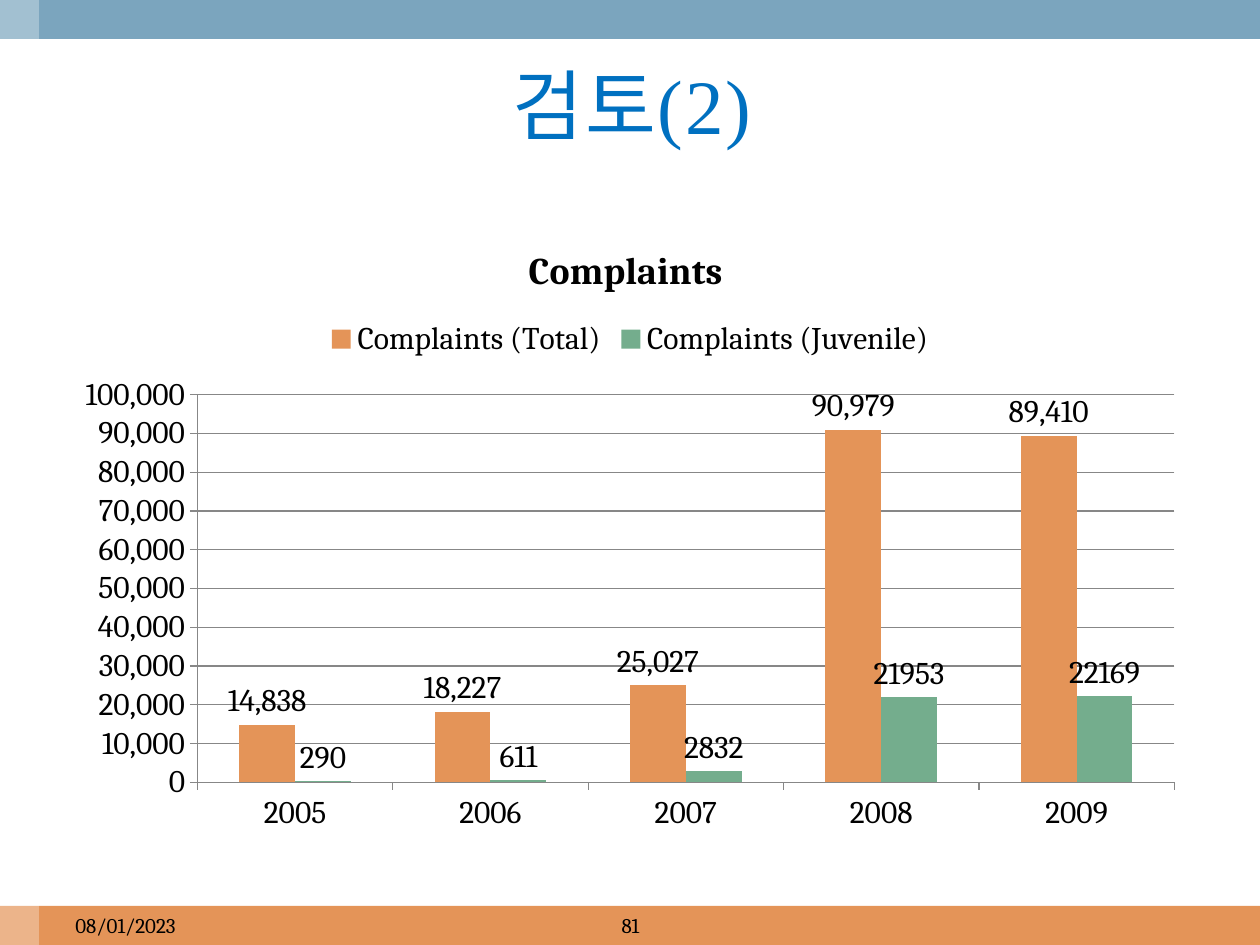
from dataclasses import dataclass

from lxml import etree
from pptx import Presentation
from pptx.chart.data import CategoryChartData
from pptx.dml.color import RGBColor
from pptx.enum.chart import XL_CHART_TYPE, XL_LABEL_POSITION, XL_LEGEND_POSITION, XL_TICK_MARK
from pptx.enum.shapes import MSO_SHAPE
from pptx.enum.text import MSO_ANCHOR, PP_ALIGN
from pptx.oxml.ns import qn
from pptx.util import Pt

EMU_PER_PX = 914400 / 126
COLUMNS = XL_CHART_TYPE.COLUMN_CLUSTERED
ABOVE_BAR = XL_LABEL_POSITION.OUTSIDE_END
TOP = XL_LEGEND_POSITION.TOP
TICK_OUT = XL_TICK_MARK.OUTSIDE
RECTANGLE = MSO_SHAPE.RECTANGLE
MIDDLE = MSO_ANCHOR.MIDDLE
LEFT, CENTER = PP_ALIGN.LEFT, PP_ALIGN.CENTER

COLORS = {
    "orange": "E49458",
    "blue": "7BA5BE",
    "green": "74AD8D",
    "title": "0070C0",
    "text": "000000",
    "axis": "878787",
    "white": "FFFFFF",
}


@dataclass(frozen=True)
class Box:
    left: int
    top: int
    width: int
    height: int

    def emu(self) -> list[int]:
        return [px(n) for n in (self.left, self.top, self.width, self.height)]


@dataclass(frozen=True)
class Band:
    box: Box
    color: str
    opacity: int = 100


@dataclass(frozen=True)
class Label:
    box: Box
    text: str
    size: int
    font: str
    color: str
    align: int
    spacing: int = 0


@dataclass(frozen=True)
class ComplaintSeries:
    name: str
    counts: tuple[int, ...]
    color: str
    number_format: str


BANDS = (
    Band(Box(0, 906, 1260, 39), "orange"),
    Band(Box(0, 0, 1260, 39), "blue"),
    Band(Box(0, 0, 39, 945), "white", 30),
)
LABELS = (
    Label(Box(42, 39, 1180, 130), "검토(2)", 44, "Times New Roman", "title", CENTER, 100),
    Label(Box(63, 906, 294, 39), "08/01/2023", 12, "Cambria", "text", LEFT),
    Label(Box(431, 906, 399, 39), "81", 12, "Cambria", "text", CENTER),
)
YEARS = ("2005", "2006", "2007", "2008", "2009")
COMPLAINTS = (
    ComplaintSeries("Complaints (Total)", (14838, 18227, 25027, 90979, 89410), "orange", "#,##0"),
    ComplaintSeries("Complaints (Juvenile)", (290, 611, 2832, 21953, 22169), "green", "General"),
)


def px(length: int) -> int:
    return round(length * EMU_PER_PX)


def rgb(name: str) -> RGBColor:
    return RGBColor.from_string(COLORS[name])


def draw_band(slide, band: Band) -> None:
    strip = slide.shapes.add_shape(RECTANGLE, *band.box.emu())
    strip.shadow.inherit = False
    strip.line.fill.background()
    strip.fill.solid()
    strip.fill.fore_color.rgb = rgb(band.color)
    if band.opacity < 100:
        color = strip.fill._xPr.find(qn("a:solidFill"))[0]
        etree.SubElement(color, qn("a:alpha")).set("val", str(band.opacity * 1000))


def draw_label(slide, label: Label) -> None:
    frame = slide.shapes.add_textbox(*label.box.emu()).text_frame
    frame.word_wrap = True
    frame.vertical_anchor = MIDDLE
    paragraph = frame.paragraphs[0]
    paragraph.alignment = label.align
    run = paragraph.add_run()
    run.text = label.text
    run.font.size = Pt(label.size)
    run.font.name = label.font
    run.font.color.rgb = rgb(label.color)
    if label.spacing:
        run.font._element.set("spc", str(label.spacing))


def draw_complaints(slide, box: Box) -> None:
    counts = CategoryChartData()
    counts.categories = YEARS
    for entry in COMPLAINTS:
        counts.add_series(entry.name, entry.counts, entry.number_format)
    chart = slide.shapes.add_chart(COLUMNS, *box.emu(), counts).chart
    chart.font.name = "Cambria"
    chart.font.size = Pt(18)
    chart.font.color.rgb = rgb("text")

    chart.has_title = True
    heading = chart.chart_title.text_frame.paragraphs[0].add_run()
    heading.text = "Complaints "
    heading.font.name = "Cambria"
    heading.font.size = Pt(21.6)
    heading.font.bold = True
    heading.font.color.rgb = rgb("text")
    chart.chart_title.include_in_layout = False

    chart.has_legend = True
    chart.legend.position = TOP
    chart.legend.include_in_layout = False

    count_axis = chart.value_axis
    count_axis.minimum_scale = 0
    count_axis.maximum_scale = 100000
    count_axis.major_unit = 10000
    count_axis.has_major_gridlines = True
    count_axis.tick_labels.number_format = "#,##0"
    count_axis.tick_labels.number_format_is_linked = False
    for axis in (chart.category_axis, count_axis):
        axis.major_tick_mark = TICK_OUT
        axis.format.line.color.rgb = rgb("axis")
        axis.format.line.width = Pt(0.75)
    gridline = count_axis.major_gridlines.format.line
    gridline.color.rgb = rgb("axis")
    gridline.width = Pt(0.75)

    plot = chart.plots[0]
    plot.gap_width = 150
    plot.overlap = 0
    plot.vary_by_categories = False
    for bars, entry in zip(plot.series, COMPLAINTS):
        bars.format.fill.solid()
        bars.format.fill.fore_color.rgb = rgb(entry.color)
        bars.invert_if_negative = False
        bar_labels = bars.data_labels
        bar_labels.show_value = True
        bar_labels.position = ABOVE_BAR
        bar_labels.number_format = entry.number_format
        bar_labels.number_format_is_linked = False


def main() -> None:
    deck = Presentation()
    deck.slide_width, deck.slide_height = px(1260), px(945)
    slide = deck.slides.add_slide(deck.slide_layouts[6])
    for band in BANDS:
        draw_band(slide, band)
    draw_complaints(slide, Box(63, 220, 1134, 624))
    for label in LABELS:
        draw_label(slide, label)
    deck.save("out.pptx")


if __name__ == "__main__":
    main()
